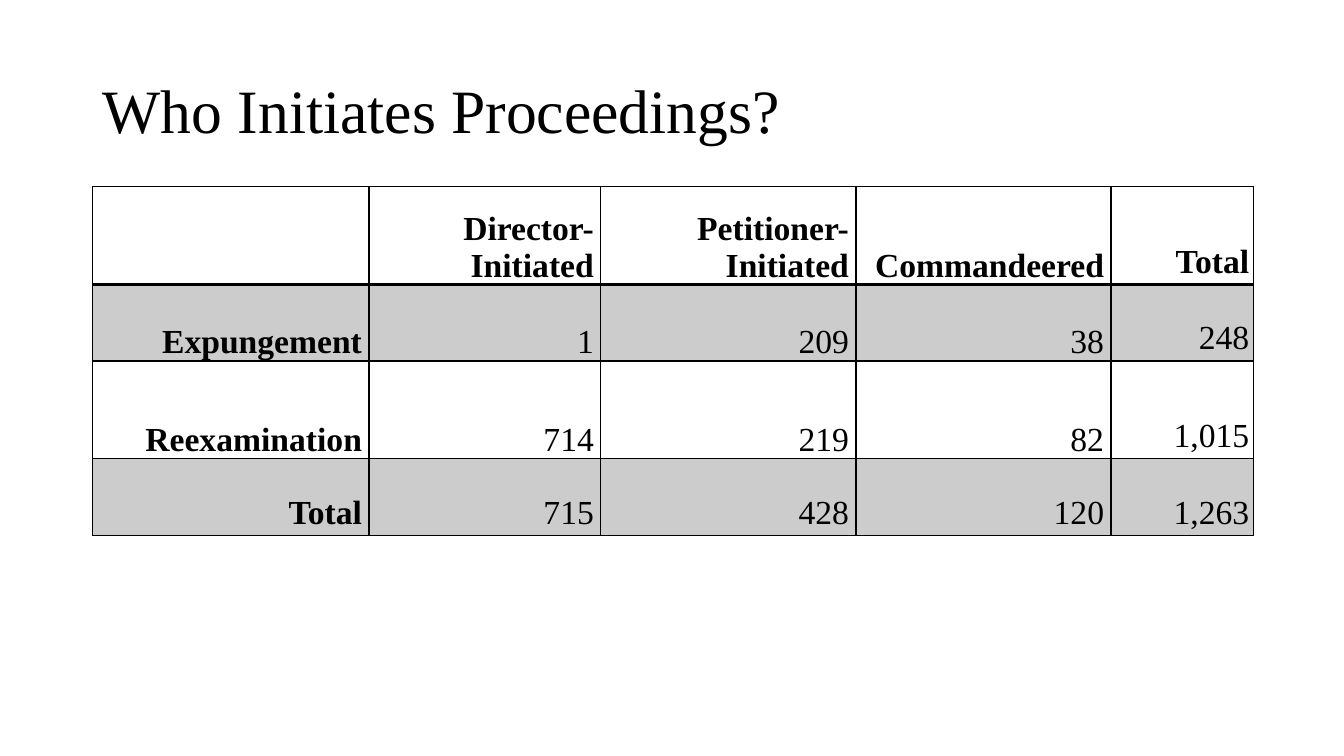
from dataclasses import dataclass

from lxml import etree
from pptx import Presentation
from pptx import util as u
from pptx.dml.color import RGBColor
from pptx.enum import text
from pptx.oxml import ns

WIDTH, HEIGHT = u.Inches(13.33), u.Inches(7.5)


@dataclass(frozen=True)
class Theme:
    font: str = "Times New Roman"
    ink: str = "000000"
    title_size: int = 44
    table_size: int = 24
    band_alpha: int = 20
    thin: int = 1
    thick: int = 2


THEME = Theme()

# Shares of the slide's size
LEFT, SPAN = 0.069, 0.863
TITLE_TOP, TITLE_HEIGHT = 0.053, 0.193
TABLE_TOP = 0.247

# Column and row sizes in inches
COLUMNS = [2.74, 2.3, 2.53, 2.53, 1.41]
ROWS = [0.97, 0.76, 0.97, 0.76]

PROCEEDINGS = [
    ["", "Director-Initiated", "Petitioner-Initiated", "Commandeered", "Total"],
    ["Expungement", "1", "209", "38", "248"],
    ["Reexamination", "714", "219", "82", "1,015"],
    ["Total", "715", "428", "120", "1,263"],
]


def apply(target, values):
    for name, value in values.items():
        setattr(target, name, value)


def write(para, words, size, bold=False):
    span = para.add_run()
    span.text = words
    apply(span.font, {"name": THEME.font, "size": u.Pt(size), "bold": bold})
    span.font.color.rgb = RGBColor.from_string(THEME.ink)


def add_title(page, words):
    box = page.shapes.add_textbox(
        int(WIDTH * LEFT), int(HEIGHT * TITLE_TOP),
        int(WIDTH * SPAN), int(HEIGHT * TITLE_HEIGHT))
    apply(box.text_frame, {"word_wrap": True,
                           "vertical_anchor": text.MSO_ANCHOR.MIDDLE})
    para = box.text_frame.paragraphs[0]
    para.line_spacing = 0.9
    write(para, words, THEME.title_size)


def add_color(parent):
    fill = etree.SubElement(parent, ns.qn("a:solidFill"))
    return etree.SubElement(fill, ns.qn("a:srgbClr"), val=THEME.ink)


def add_borders(cell, top, bottom):
    props = cell._tc.get_or_add_tcPr()
    widths = {"L": THEME.thin, "R": THEME.thin, "T": top, "B": bottom}
    for side, width in widths.items():
        line = etree.SubElement(props, ns.qn(f"a:ln{side}"), w=str(u.Pt(width)))
        add_color(line)


def shade(cell, banded):
    if not banded:
        cell.fill.background()
        return
    color = add_color(cell._tc.get_or_add_tcPr())
    etree.SubElement(color, ns.qn("a:alpha"), val=str(THEME.band_alpha * 1000))


def format_cell(cell, words, row, column):
    last_column = column == len(COLUMNS) - 1
    side = u.Inches(0.04 if last_column else 0.07)
    edge = u.Inches(0.04 if last_column or row == len(ROWS) - 1 else 0)
    apply(cell, {"margin_left": side, "margin_right": side,
                 "margin_top": edge, "margin_bottom": edge,
                 "vertical_anchor": text.MSO_ANCHOR.BOTTOM})
    # The header is set off by a heavier rule
    add_borders(cell, THEME.thick if row == 1 else THEME.thin,
                THEME.thick if row == 0 else THEME.thin)
    shade(cell, banded=row % 2 == 1)
    para = cell.text_frame.paragraphs[0]
    para.alignment = text.PP_ALIGN.RIGHT
    if words:
        write(para, words, THEME.table_size, bold=row == 0 or column == 0)


def add_grid(page, records):
    frame = page.shapes.add_table(
        len(ROWS), len(COLUMNS), int(WIDTH * LEFT), int(HEIGHT * TABLE_TOP),
        u.Inches(sum(COLUMNS)), u.Inches(sum(ROWS)))
    table = frame.table
    apply(table, {"first_row": False, "horz_banding": False})
    for column, width in zip(table.columns, COLUMNS):
        column.width = u.Inches(width)
    for row, height in zip(table.rows, ROWS):
        row.height = u.Inches(height)
    for r, record in enumerate(records):
        for c, words in enumerate(record):
            format_cell(table.cell(r, c), words, r, c)


def main():
    deck = Presentation()
    apply(deck, {"slide_width": WIDTH, "slide_height": HEIGHT})
    page = deck.slides.add_slide(deck.slide_layouts[6])
    add_title(page, "Who Initiates Proceedings?")
    add_grid(page, PROCEEDINGS)
    deck.save("out.pptx")


if __name__ == "__main__":
    main()
